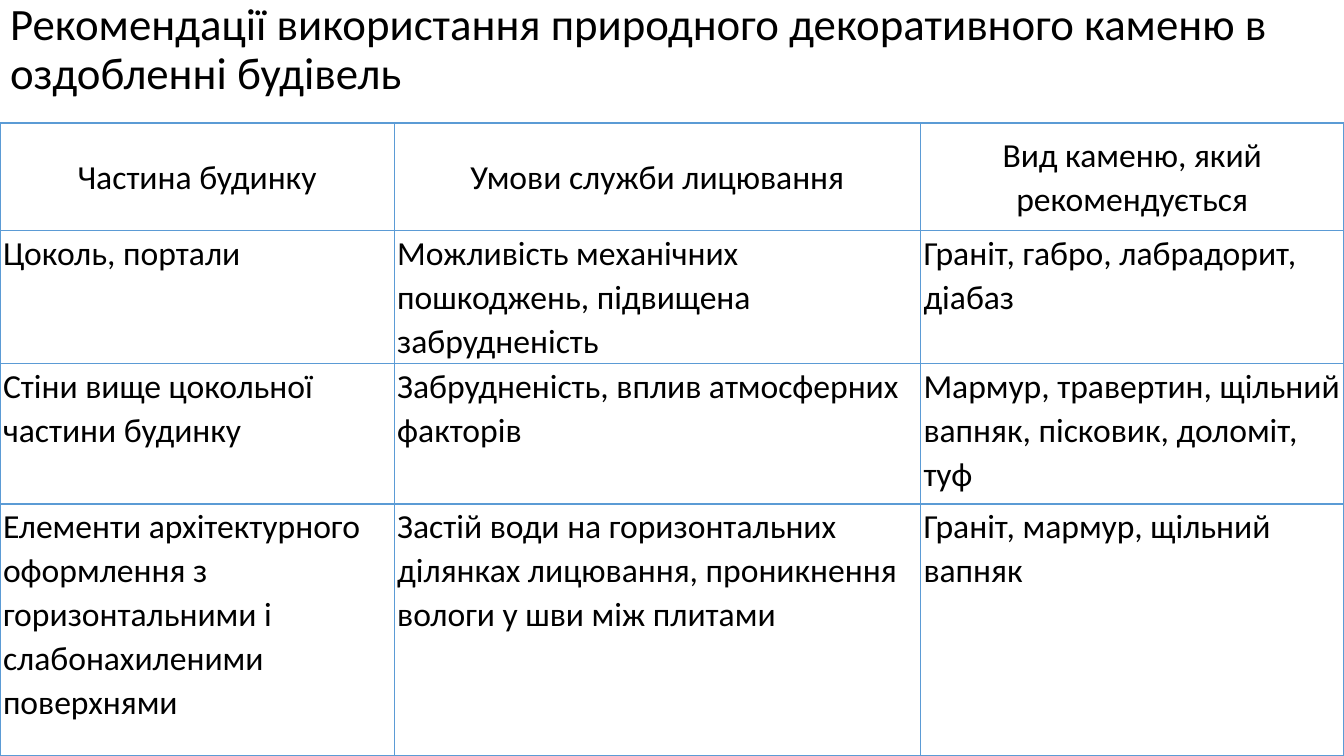
import pptx
import pptx.dml.color
import pptx.enum.text
import pptx.oxml.ns
import pptx.util
from dataclasses import dataclass
from lxml import etree

Inches = pptx.util.Inches
Pt = pptx.util.Pt
RGBColor = pptx.dml.color.RGBColor
PP_ALIGN = pptx.enum.text.PP_ALIGN
MSO_ANCHOR = pptx.enum.text.MSO_ANCHOR


@dataclass(frozen=True)
class Theme:
    font: str = "Calibri"
    text: str = "000000"
    border: str = "5B9BD5"
    title_size: int = 32
    table_size: int = 24
    border_width: int = 1


THEME = Theme()

TITLE = "Рекомендації використання природного декоративного каменю в оздобленні будівель"
COLUMN_WIDTHS = [3.91, 5.22, 4.2]
ROW_HEIGHTS = [1.07, 1.32, 1.39, 2.5]
STONE_ROWS = [
    ["Частина будинку", "Умови служби лицювання", "Вид каменю, який рекомендується"],
    ["Цоколь, портали",
     "Можливість механічних пошкоджень, підвищена забрудненість",
     "Граніт, габро, лабрадорит, діабаз"],
    ["Стіни вище цокольної частини будинку",
     "Забрудненість, вплив атмосферних факторів",
     "Мармур, травертин, щільний вапняк, пісковик, доломіт, туф"],
    ["Елементи архітектурного оформлення з горизонтальними і слабонахиленими поверхнями",
     "Застій води на горизонтальних ділянках лицювання, проникнення вологи у шви між плитами",
     "Граніт, мармур, щільний вапняк"],
]


def apply_format(target, values):
    for name, value in values.items():
        setattr(target, name, value)


def write_text(frame, text, size, alignment, line_spacing):
    para = frame.paragraphs[0]
    apply_format(para, {"alignment": alignment, "line_spacing": line_spacing})
    span = para.add_run()
    span.text = text
    apply_format(span.font, {"name": THEME.font, "size": Pt(size), "bold": False})
    span.font.color.rgb = RGBColor.from_string(THEME.text)


def add_borders(cell):
    properties = cell._tc.get_or_add_tcPr()
    qn = pptx.oxml.ns.qn
    for side in ("lnL", "lnR", "lnT", "lnB"):
        line = etree.SubElement(properties, qn(f"a:{side}"), w=str(Pt(THEME.border_width)))
        fill = etree.SubElement(line, qn("a:solidFill"))
        etree.SubElement(fill, qn("a:srgbClr"), val=THEME.border)


def place_title(page, left, top, width, height):
    title = page.shapes.title
    apply_format(title, {"left": Inches(left), "top": Inches(top),
                         "width": Inches(width), "height": Inches(height)})
    apply_format(title.text_frame, {"word_wrap": True,
                                    "auto_size": pptx.enum.text.MSO_AUTO_SIZE.NONE,
                                    "vertical_anchor": MSO_ANCHOR.MIDDLE})
    write_text(title.text_frame, TITLE, THEME.title_size, PP_ALIGN.LEFT, 0.9)


def place_stone_table(page, left, top, width, height):
    frame = page.shapes.add_table(len(STONE_ROWS), len(COLUMN_WIDTHS), Inches(left),
                                  Inches(top), Inches(width), Inches(height))
    table = frame.table
    apply_format(table, {"first_row": False, "horz_banding": False})

    # Column and row sizes share out the box
    for column, share in zip(table.columns, COLUMN_WIDTHS):
        column.width = Inches(width * share / sum(COLUMN_WIDTHS))
    for row, share in zip(table.rows, ROW_HEIGHTS):
        row.height = Inches(height * share / sum(ROW_HEIGHTS))

    # Cells: centred header, left-aligned body
    for row_index, texts in enumerate(STONE_ROWS):
        header = row_index == 0
        for column_index, text in enumerate(texts):
            cell = table.cell(row_index, column_index)
            apply_format(cell, {
                "margin_left": Inches(0.03), "margin_right": Inches(0.03),
                "margin_top": 0, "margin_bottom": 0,
                "vertical_anchor": MSO_ANCHOR.MIDDLE if header else MSO_ANCHOR.TOP,
            })
            add_borders(cell)
            cell.fill.background()
            write_text(cell.text_frame, text, THEME.table_size,
                       PP_ALIGN.CENTER if header else PP_ALIGN.LEFT, 1.07)


def main():
    deck = pptx.Presentation()
    apply_format(deck, {"slide_width": Inches(13.33), "slide_height": Inches(7.5)})
    page = deck.slides.add_slide(deck.slide_layouts.get_by_name("Title Only"))
    place_title(page, 0, 0, 13.22, 1)
    place_stone_table(page, 0, 1.22, 13.33, 6.28)
    deck.save("out.pptx")


if __name__ == "__main__":
    main()
